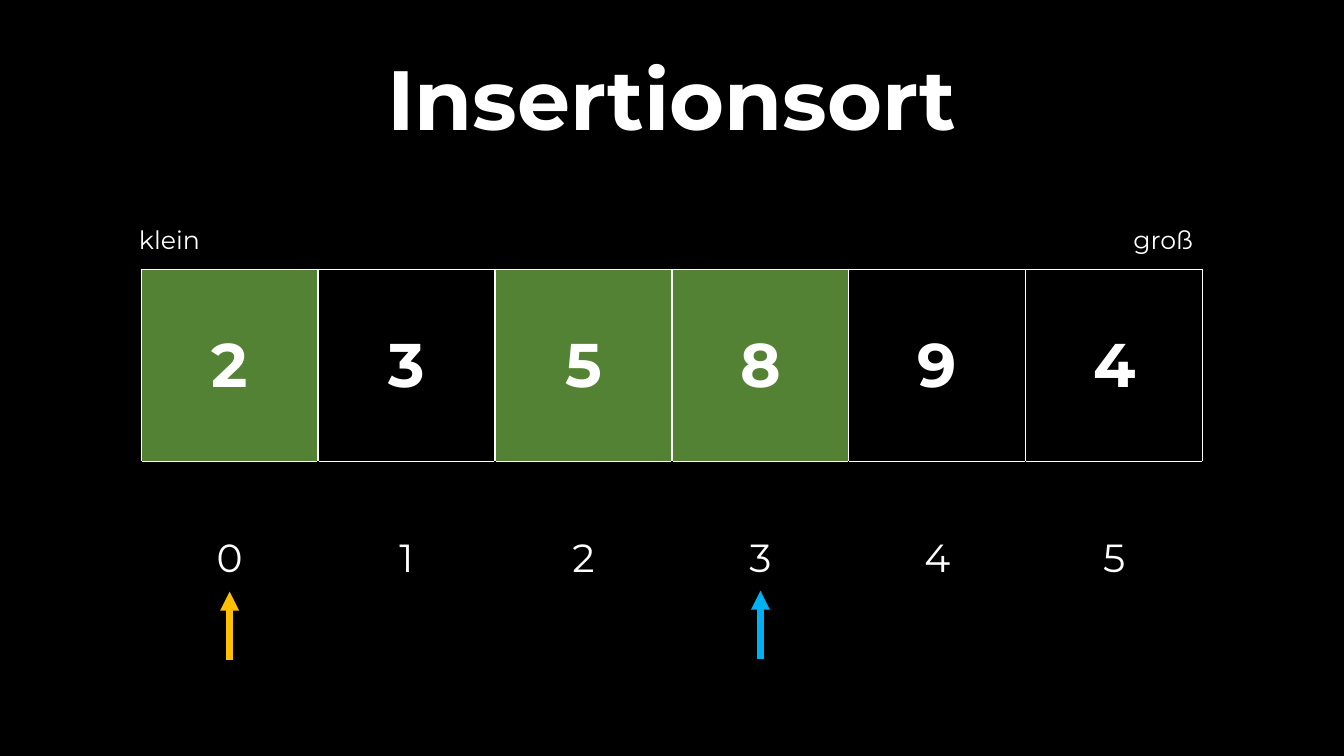
from pptx import Presentation
from pptx.dml.color import RGBColor
from pptx.enum.shapes import MSO_CONNECTOR as Connector
from pptx.enum.text import MSO_ANCHOR as Anchor, MSO_AUTO_SIZE as AutoSize, PP_ALIGN as Align
from pptx.oxml.ns import qn
from pptx.util import Inches, Pt
from lxml.etree import SubElement

BLACK = RGBColor(0x00, 0x00, 0x00)
WHITE = RGBColor(0xFF, 0xFF, 0xFF)
GREEN = RGBColor(0x54, 0x82, 0x35)
BLUE = RGBColor(0x00, 0xB0, 0xF0)
AMBER = RGBColor(0xFF, 0xC0, 0x00)

VALUES = [2, 3, 5, 8, 9, 4]
HIGHLIGHTED = {0, 2, 3}
ARRAY_LEFT, ARRAY_TOP = 1.4, 2.67
ARRAY_WIDTH = 10.53
CELL_WIDTH, CELL_HEIGHT = ARRAY_WIDTH / len(VALUES), 1.91
ARROW_LENGTH = 0.68


class SlideBuilder:
    font_name = "Montserrat"

    def __init__(self, presentation):
        self.slide = presentation.slides.add_slide(presentation.slide_layouts[6])
        background = self.slide.background.fill
        background.solid()
        background.fore_color.rgb = BLACK

    def add_text(self, paragraph, text, size, bold=False, align=Align.LEFT):
        paragraph.alignment = align
        run = paragraph.add_run()
        run.text = text
        run.font.name = self.font_name
        run.font.size = Pt(size)
        run.font.bold = bold
        run.font.color.rgb = WHITE

    def text_box(self, left, top, width, height, text, size, bold=False, align=Align.LEFT):
        box = self.slide.shapes.add_textbox(
            Inches(left), Inches(top), Inches(width), Inches(height))
        frame = box.text_frame
        frame.word_wrap = True
        self.add_text(frame.paragraphs[0], text, size, bold, align)
        return frame

    def label(self, left, text, align):
        frame = self.text_box(left, 2.18, 1.51, 0.4, text, 18, align=align)
        frame.auto_size = AutoSize.SHAPE_TO_FIT_TEXT

    def title(self, text):
        frame = self.text_box(0.15, 0.31, 13.03, 1.42, text, 60, True, Align.CENTER)
        frame.vertical_anchor = Anchor.MIDDLE
        frame.paragraphs[0].line_spacing = 0.9

    def border(self, cell, side, color):
        properties = cell._tc.get_or_add_tcPr()
        line = SubElement(properties, qn(f"a:ln{side}"), w=str(Pt(1)))
        fill = SubElement(line, qn("a:solidFill"))
        SubElement(fill, qn("a:srgbClr"), val=str(color))

    def cell(self, cell, text, size, bold, side_color, fill_color=None):
        """Fill one cell; its top border is white, the others take side_color."""
        for side in "LRTB":
            self.border(cell, side, WHITE if side == "T" else side_color)
        if fill_color is None:
            cell.fill.background()
        else:
            cell.fill.solid()
            cell.fill.fore_color.rgb = fill_color
        cell.vertical_anchor = Anchor.MIDDLE
        self.add_text(cell.text_frame.paragraphs[0], text, size, bold, Align.CENTER)

    def array(self, values, highlighted):
        """Draw the values with their indices in a row below."""
        table = self.slide.shapes.add_table(
            2, len(values), Inches(ARRAY_LEFT), Inches(ARRAY_TOP),
            Inches(ARRAY_WIDTH), Inches(2 * CELL_HEIGHT)).table
        table.first_row = table.horz_banding = False
        for index, value in enumerate(values):
            fill_color = GREEN if index in highlighted else None
            self.cell(table.cell(0, index), str(value), 44, True, WHITE, fill_color)
            self.cell(table.cell(1, index), str(index), 28, False, BLACK)

    def pointer(self, index, bottom, color):
        """Draw an upward arrow below the given index."""
        x = Inches(ARRAY_LEFT + (index + 0.5) * CELL_WIDTH)
        arrow = self.slide.shapes.add_connector(
            Connector.STRAIGHT, x, Inches(bottom), x, Inches(bottom - ARROW_LENGTH))
        arrow.line.color.rgb = color
        arrow.line.width = Pt(4.5)
        SubElement(arrow.line._get_or_add_ln(), qn("a:tailEnd"), type="triangle")
        SubElement(arrow._element.spPr, qn("a:effectLst"))


def main():
    presentation = Presentation()
    presentation.slide_width = Inches(13.33)
    presentation.slide_height = Inches(7.5)
    builder = SlideBuilder(presentation)
    builder.array(VALUES, HIGHLIGHTED)
    builder.label(10.42, "groß", Align.RIGHT)
    builder.label(1.28, "klein", Align.LEFT)
    builder.pointer(3, 6.54, BLUE)
    builder.pointer(0, 6.55, AMBER)
    builder.title("Insertionsort")
    presentation.save("out.pptx")


if __name__ == "__main__":
    main()
